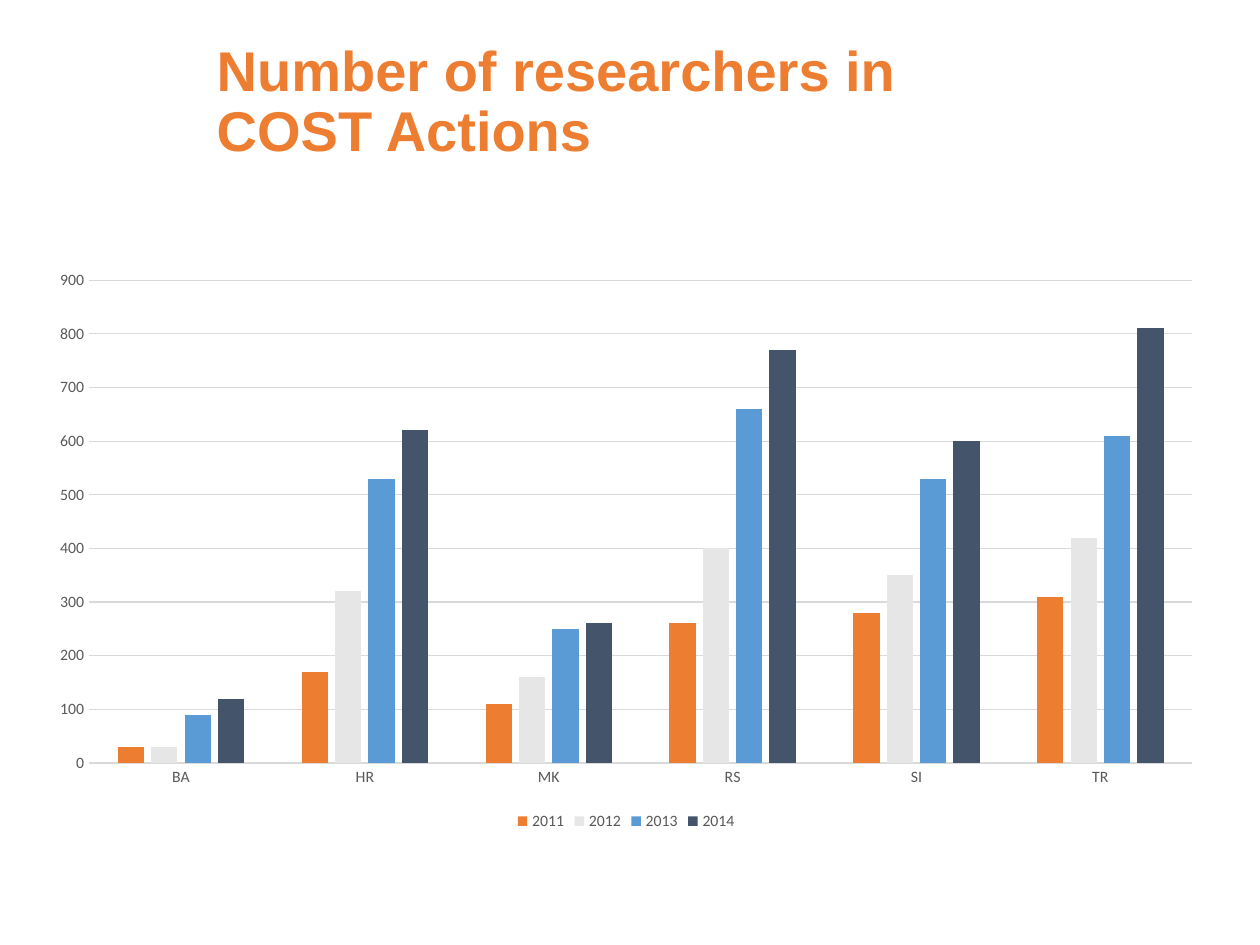
from lxml import etree
from pptx import Presentation
from pptx import util as u
from pptx.chart.data import CategoryChartData
from pptx.dml.color import RGBColor
from pptx.enum import chart as ch, text

PX = 9144  # 100 px to the inch
TITLE = "Number of researchers in COST Actions"
TITLE_BOX = (162, 29, 643, 118)
CHART_BOX = (29, 206, 936, 457)
COUNTRIES = ["BA", "HR", "MK", "RS", "SI", "TR"]
RESEARCHERS = [
    ("2011", "ED7D31", (30, 170, 110, 260, 280, 310)),
    ("2012", "E7E6E6", (30, 320, 160, 400, 350, 420)),
    ("2013", "5B9BD5", (90, 530, 250, 660, 530, 610)),
    ("2014", "44546A", (120, 620, 260, 770, 600, 810)),
]
ORANGE, LABEL_GREY, LINE_GREY = "ED7D31", "595959", "D9D9D9"


def rgb(value):
    return RGBColor.from_string(value)


def px(box):
    return [u.Emu(n * PX) for n in box]


def style_font(font, name, size, color, bold=False):
    font.name, font.size, font.bold = name, u.Pt(size), bold
    font.color.rgb = rgb(color)


def style_line(line):
    line.color.rgb = rgb(LINE_GREY)
    line.width = u.Pt(0.75)


def add_title(slide):
    title = slide.shapes.title
    title.left, title.top, title.width, title.height = px(TITLE_BOX)
    frame = title.text_frame
    frame.word_wrap = True
    frame.auto_size = text.MSO_AUTO_SIZE.NONE
    frame.vertical_anchor = text.MSO_ANCHOR.TOP
    heading = frame.paragraphs[0]
    heading.alignment = text.PP_ALIGN.LEFT
    heading.line_spacing = 0.9
    run = heading.add_run()
    run.text = TITLE
    style_font(run.font, "Arial", 32, ORANGE, bold=True)


def add_researcher_chart(slide):
    data = CategoryChartData()
    data.categories = COUNTRIES
    for year, _, counts in RESEARCHERS:
        data.add_series(year, counts)
    chart = slide.shapes.add_chart(
        ch.XL_CHART_TYPE.COLUMN_CLUSTERED, *px(CHART_BOX), data).chart
    chart.has_title = False
    style_font(chart.font, "Calibri", 10, "000000")

    plot = chart.plots[0]
    plot.gap_width, plot.overlap, plot.vary_by_categories = 219, -27, False
    for series, (_, color, _) in zip(plot.series, RESEARCHERS):
        series.format.fill.solid()
        series.format.fill.fore_color.rgb = rgb(color)
        series.invert_if_negative = False

    countries, counts = chart.category_axis, chart.value_axis
    for axis in (countries, counts):
        axis.major_tick_mark = axis.minor_tick_mark = ch.XL_TICK_MARK.NONE
        style_font(axis.tick_labels.font, "Calibri", 9, LABEL_GREY)
    style_line(countries.format.line)
    counts.format.line.fill.background()
    counts.minimum_scale, counts.maximum_scale, counts.major_unit = 0, 900, 100
    counts.has_major_gridlines = True
    style_line(counts.major_gridlines.format.line)

    chart.has_legend = True
    chart.legend.position = ch.XL_LEGEND_POSITION.BOTTOM
    chart.legend.include_in_layout = False
    style_font(chart.legend.font, "Calibri", 9, LABEL_GREY)


def main():
    deck = Presentation()
    deck.slide_width, deck.slide_height = px((1000, 750))
    slide = deck.slides.add_slide(deck.slide_layouts[5])
    slide.background.fill.solid()
    slide.background.fill.fore_color.rgb = rgb("FFFFFF")
    add_title(slide)
    add_researcher_chart(slide)
    deck.save("out.pptx")


if __name__ == "__main__":
    main()
